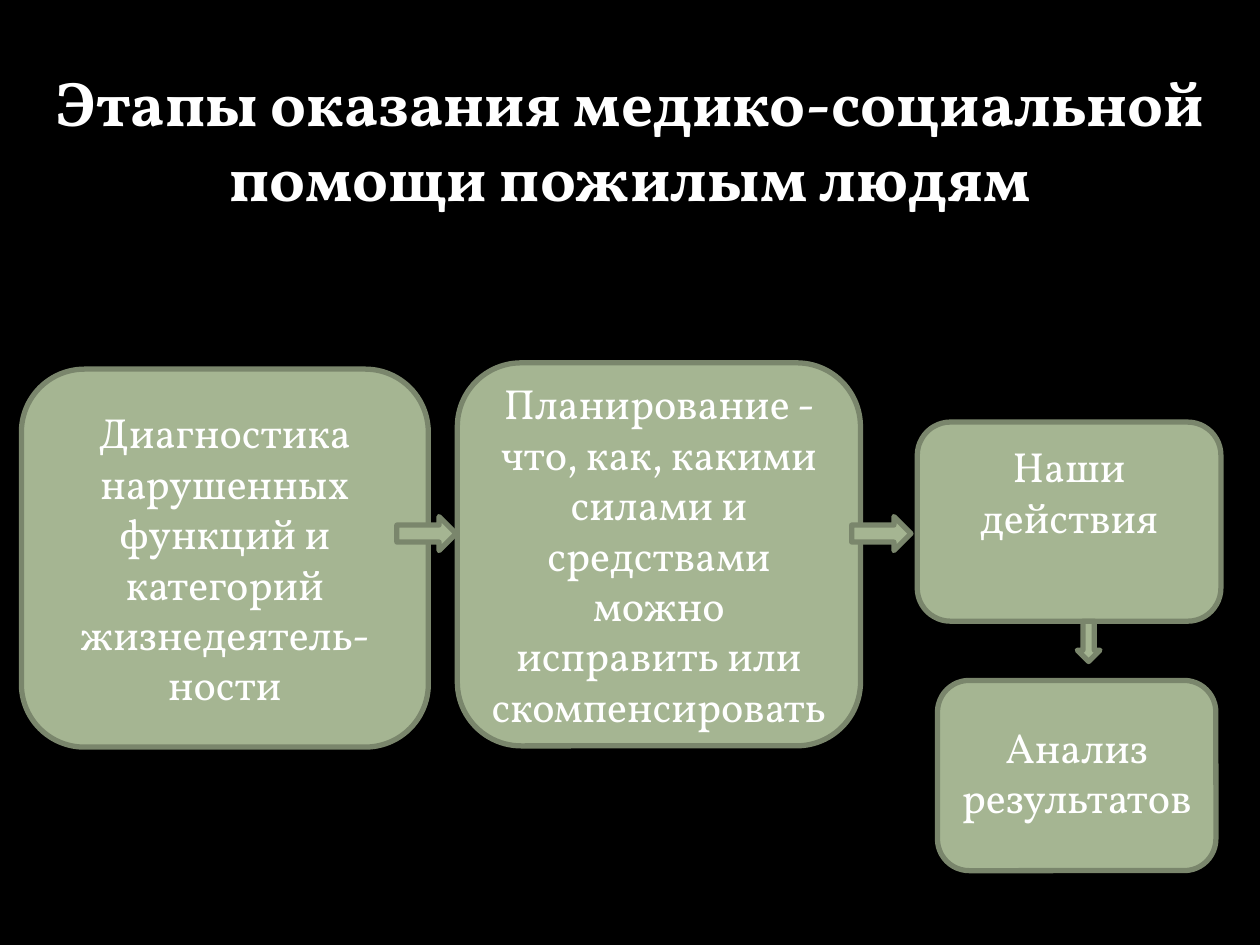
import pptx
import pptx.dml.color
import pptx.enum.shapes
import pptx.enum.text
import pptx.util

Inches = pptx.util.Inches
Pt = pptx.util.Pt
RGBColor = pptx.dml.color.RGBColor
Shape = pptx.enum.shapes.MSO_SHAPE
Anchor = pptx.enum.text.MSO_ANCHOR

BLACK = RGBColor(0x00, 0x00, 0x00)
WHITE = RGBColor(0xFF, 0xFF, 0xFF)
SAGE = RGBColor(0xA5, 0xB5, 0x92)
MOSS = RGBColor(0x7A, 0x86, 0x6C)


def write(frame, text, font="Vollkorn", size=24, color=WHITE, bold=False,
          anchor=Anchor.MIDDLE, top=0.05, bottom=0.05):
    """Fill a text frame with centred text, one paragraph per line."""
    frame.word_wrap = True
    frame.auto_size = pptx.enum.text.MSO_AUTO_SIZE.NONE
    frame.vertical_anchor = anchor
    frame.margin_top, frame.margin_bottom = Inches(top), Inches(bottom)
    frame.text = text
    for paragraph in frame.paragraphs:
        paragraph.alignment = pptx.enum.text.PP_ALIGN.CENTER
        paragraph.line_spacing = 1.0
        paragraph.space_before = Pt(0)
        paragraph.font.name = font
        paragraph.font.size = Pt(size)
        paragraph.font.color.rgb = color
        paragraph.font.bold = bold


class StageSlide:
    def __init__(self, presentation, fill=SAGE, outline=MOSS, outline_width=3):
        self.fill = fill
        self.outline = outline
        self.outline_width = outline_width
        self.slide = presentation.slides.add_slide(presentation.slide_layouts[5])
        background = self.slide.background.fill
        background.solid()
        background.fore_color.rgb = BLACK

    def title(self, text, left, top, width, height):
        heading = self.slide.shapes.title
        heading.left, heading.top = Inches(left), Inches(top)
        heading.width, heading.height = Inches(width), Inches(height)
        write(heading.text_frame, text, size=36, bold=True,
              anchor=Anchor.TOP, top=0, bottom=0)

    def block(self, kind, left, top, width, height):
        block = self.slide.shapes.add_shape(
            kind, Inches(left), Inches(top), Inches(width), Inches(height))
        block.shadow.inherit = False
        block.fill.solid()
        block.fill.fore_color.rgb = self.fill
        block.line.color.rgb = self.outline
        block.line.width = Pt(self.outline_width)
        return block

    def stage(self, text, *place, **text_format):
        block = self.block(Shape.ROUNDED_RECTANGLE, *place)
        write(block.text_frame, text, **text_format)

    def arrow_right(self, left):
        self.block(Shape.RIGHT_ARROW, left, 4.1, 0.47, 0.27)

    def arrow_down(self, left, top):
        self.block(Shape.DOWN_ARROW, left, top, 0.18, 0.32)


def main():
    presentation = pptx.Presentation()
    presentation.slide_width = Inches(10)
    presentation.slide_height = Inches(7.5)

    stages = StageSlide(presentation)
    stages.title("Этапы оказания медико-социальной помощи пожилым людям",
                 0, 0.5, 10, 1.3)
    stages.stage("Диагностика\nнарушенных функций и категорий жизнедеятель-ности",
                 0.17, 2.93, 3.23, 3)
    stages.stage("Планирование - что, как, какими силами и средствами можно "
                 "исправить или скомпенсировать", 3.63, 2.88, 3.2, 3.04)
    stages.stage("Наши действия", 7.28, 3.35, 2.41, 1.58, bottom=0.53)
    for left in (3.15, 6.76):
        stages.arrow_right(left)
    stages.arrow_down(8.55, 4.93)
    stages.stage("Анализ\nрезультатов", 7.44, 5.4, 2.21, 1.51, bottom=0.11)

    presentation.save("out.pptx")


if __name__ == "__main__":
    main()
